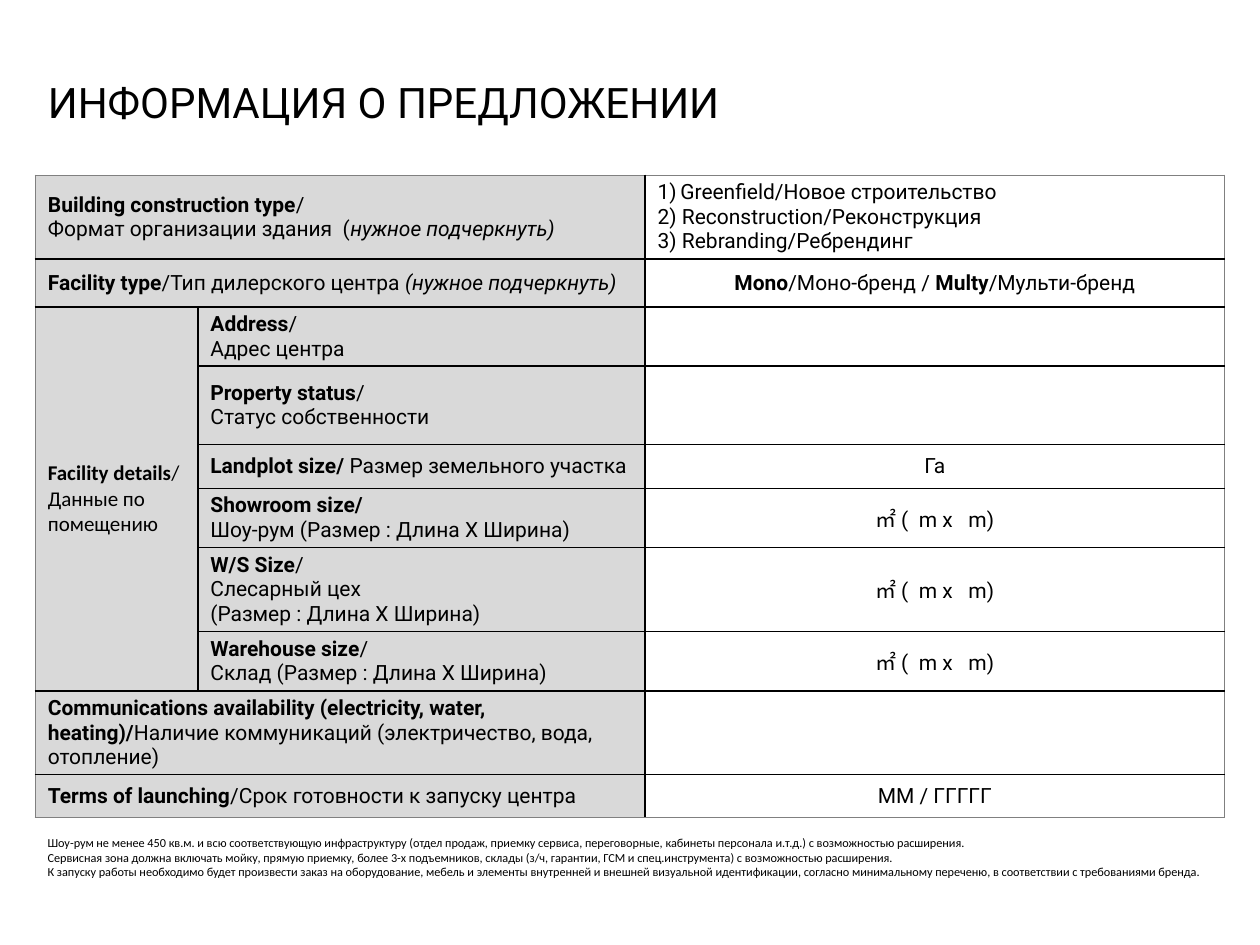
import copy

import pptx
import pptx.dml.color
import pptx.enum.text
import pptx.oxml
import pptx.oxml.ns
import pptx.util
from pptx.util import Inches

BLACK = pptx.dml.color.RGBColor(0x00, 0x00, 0x00)
WHITE = pptx.dml.color.RGBColor(0xFF, 0xFF, 0xFF)
LABEL_GREY = pptx.dml.color.RGBColor(0xD9, 0xD9, 0xD9)
FRAME_GREY = pptx.dml.color.RGBColor(0x80, 0x80, 0x80)
NS = pptx.oxml.ns.nsdecls("a")
BREAK = "\v"

COLUMN_WIDTHS = [1.29, 3.55, 4.6]
ROW_HEIGHTS = [0.53, 0.38, 0.38, 0.62, 0.35, 0.45, 0.53, 0.46, 0.53, 0.34]
DETAIL_ROWS = range(2, 8)

# A paragraph is a list of (text, style) runs; "b" is bold, "i" italic
LABELS = [
    [[("Building construction type", "b"), ("/", "")],
     [("Формат организации здания  (", ""), ("нужное подчеркнуть)", "i")]],
    [[("Facility type", "b"), ("/Тип дилерского центра ", ""),
      ("(нужное подчеркнуть)", "i")]],
    [[("Address", "b"), ("/", "")], [("Адрес центра", "")]],
    [[("Property status", "b"), ("/", "")], [("Статус собственности", "")]],
    [[("Landplot size/ ", "b"), ("Размер земельного участка", "")]],
    [[("Showroom size/", "b")], [("Шоу-рум (Размер : Длина Х Ширина)", "")]],
    [[("W/S Size", "b"), ("/", "")],
     [("Слесарный цех", ""), (BREAK, ""), ("(Размер : Длина Х Ширина)", "")]],
    [[("Warehouse size", "b"), ("/", "")],
     [("Склад (Размер : Длина Х Ширина)", "")]],
    [[("Communications availability (electricity, water, heating)/", "b"),
      ("Наличие коммуникаций (электричество, вода, отопление)", "")]],
    [[("Terms of launching", "b"), ("/Срок готовности к запуску центра", "")]],
]
DETAILS_LABEL = [[("Facility details", "b"), ("/", "")],
                 [("Данные по помещению", "")]]
BUILD_OPTIONS = [
    [("Greenfield/Новое строительство", "")],
    [("2) Reconstruction/Реконструкция", "")],
    [("3) Rebranding/Ребрендинг", "")],
]
AREA = [[("㎡ (  m x   m)", "")]]
ANSWERS = {
    1: [[("Mono", "b"), ("/Моно-бренд / ", ""),
         ("Multy", "b"), ("/Мульти-бренд", "")]],
    4: [[("Га", "")]],
    5: AREA,
    6: AREA,
    7: AREA,
    9: [[("ММ / ГГГГГ", "")]],
}
NOTES = [
    "Шоу-рум не менее 450 кв.м. и всю соответствующую инфраструктуру (отдел продаж, приемку сервиса, переговорные, кабинеты персонала и.т.д.) с возможностью расширения.",
    "Сервисная зона должна включать мойку, прямую приемку, более 3-х подъемников, склады (з/ч, гарантии, ГСМ и спец.инструмента) с возможностью расширения.",
    "К запуску работы необходимо будет произвести заказ на оборудование, мебель и элементы внутренней и внешней визуальной идентификации, согласно минимальному переченю, в соответствии с требованиями бренда.",
]


class OfferSlide:
    font = "Roboto"
    note_font = "Calibri"

    def __init__(self, presentation):
        self.slide = presentation.slides.add_slide(presentation.slide_layouts[5])

    def format_run(self, run, size, font, style=""):
        run.font.size = pptx.util.Pt(size)
        run.font.name = font
        run.font.color.rgb = BLACK
        run.font.bold = "b" in style
        run.font.italic = "i" in style

    def place_title(self, text):
        title = self.slide.shapes.title
        title.left, title.top = Inches(0.28), Inches(0.54)
        title.width, title.height = Inches(7.72), Inches(0.54)
        frame = title.text_frame
        frame.text = text
        frame.vertical_anchor = pptx.enum.text.MSO_ANCHOR.MIDDLE
        frame.paragraphs[0].alignment = pptx.enum.text.PP_ALIGN.LEFT
        self.format_run(frame.paragraphs[0].runs[0], 24, self.font)

    def add_grid(self):
        self.grid = self.slide.shapes.add_table(
            len(ROW_HEIGHTS), len(COLUMN_WIDTHS), Inches(0.28), Inches(1.39),
            Inches(sum(COLUMN_WIDTHS)), Inches(sum(ROW_HEIGHTS))).table
        self.grid.first_row = self.grid.horz_banding = False
        for column, width in zip(self.grid.columns, COLUMN_WIDTHS):
            column.width = Inches(width)
        for row, height in zip(self.grid.rows, ROW_HEIGHTS):
            row.height = Inches(height)

    def fill_cell(self, row, column, paragraphs, centred=False, font=None):
        cell = self.grid.cell(row, column)
        cell.vertical_anchor = pptx.enum.text.MSO_ANCHOR.MIDDLE
        cell.margin_left = cell.margin_right = Inches(0.1)
        cell.margin_top = cell.margin_bottom = Inches(0.04)
        frame = cell.text_frame
        for index, runs in enumerate(paragraphs):
            paragraph = frame.add_paragraph() if index else frame.paragraphs[0]
            if centred:
                paragraph.alignment = pptx.enum.text.PP_ALIGN.CENTER
            for text, style in runs:
                if text == BREAK:
                    paragraph.add_line_break()
                    continue
                run = paragraph.add_run()
                run.text = text
                self.format_run(run, 12, font or self.font, style)
            # Line breaks take the size of the text around them
            for line_break in paragraph._p.findall(pptx.oxml.ns.qn("a:br")):
                line_break.append(copy.deepcopy(paragraph.runs[0].font._rPr))
        return frame

    def number_options(self, frame):
        for paragraph in frame.paragraphs:
            properties = paragraph._p.get_or_add_pPr()
            properties.set("marL", str(Inches(0.18)))
            properties.set("indent", str(Inches(-0.18)))
        frame.paragraphs[0]._p.get_or_add_pPr().append(pptx.oxml.parse_xml(
            f'<a:buAutoNum {NS} type="arabicParenR"/>'))

    def border_cell(self, row, column):
        cell = self.grid.cell(row, column)
        last_row = row + cell.span_height == len(ROW_HEIGHTS)
        last_column = column + cell.span_width == len(COLUMN_WIDTHS)
        outer = {"L": column == 0, "R": last_column, "T": row == 0, "B": last_row}
        properties = cell._tc.get_or_add_tcPr()
        for side, is_outer in outer.items():
            color, width = (FRAME_GREY, 0.75) if is_outer else (BLACK, 1)
            properties.append(pptx.oxml.parse_xml(
                f'<a:ln{side} {NS} w="{pptx.util.Pt(width)}"><a:solidFill>'
                f'<a:srgbClr val="{color}"/></a:solidFill></a:ln{side}>'))

    def finish_grid(self):
        for row in range(len(ROW_HEIGHTS)):
            for column in range(len(COLUMN_WIDTHS)):
                cell = self.grid.cell(row, column)
                if not cell.is_spanned:
                    self.border_cell(row, column)
                cell.fill.solid()
                cell.fill.fore_color.rgb = WHITE if column == 2 else LABEL_GREY

    def add_notes_text(self, lines):
        box = self.slide.shapes.add_textbox(
            Inches(0.28), Inches(6.58), Inches(9.53), Inches(0.45))
        frame = box.text_frame
        frame.word_wrap = True
        frame.text = "\n".join(lines)
        for paragraph in frame.paragraphs:
            self.format_run(paragraph.runs[0], 7, self.note_font)


def main():
    presentation = pptx.Presentation()
    presentation.slide_width, presentation.slide_height = Inches(10), Inches(7.5)
    offer = OfferSlide(presentation)
    offer.place_title("ИНФОРМАЦИЯ О ПРЕДЛОЖЕНИИ")

    # Merged label cells
    offer.add_grid()
    grid = offer.grid
    grid.cell(DETAIL_ROWS[0], 0).merge(grid.cell(DETAIL_ROWS[-1], 0))
    for row in range(len(ROW_HEIGHTS)):
        if row not in DETAIL_ROWS:
            grid.cell(row, 0).merge(grid.cell(row, 1))

    # Labels on the left, answers on the right
    offer.fill_cell(DETAIL_ROWS[0], 0, DETAILS_LABEL, font=offer.note_font)
    for row, label in enumerate(LABELS):
        offer.fill_cell(row, 1 if row in DETAIL_ROWS else 0, label)
    offer.number_options(offer.fill_cell(0, 2, BUILD_OPTIONS))
    for row, answer in ANSWERS.items():
        offer.fill_cell(row, 2, answer, centred=True)
    offer.finish_grid()

    # Requirements under the table
    offer.add_notes_text(NOTES)
    presentation.save("out.pptx")


if __name__ == "__main__":
    main()
